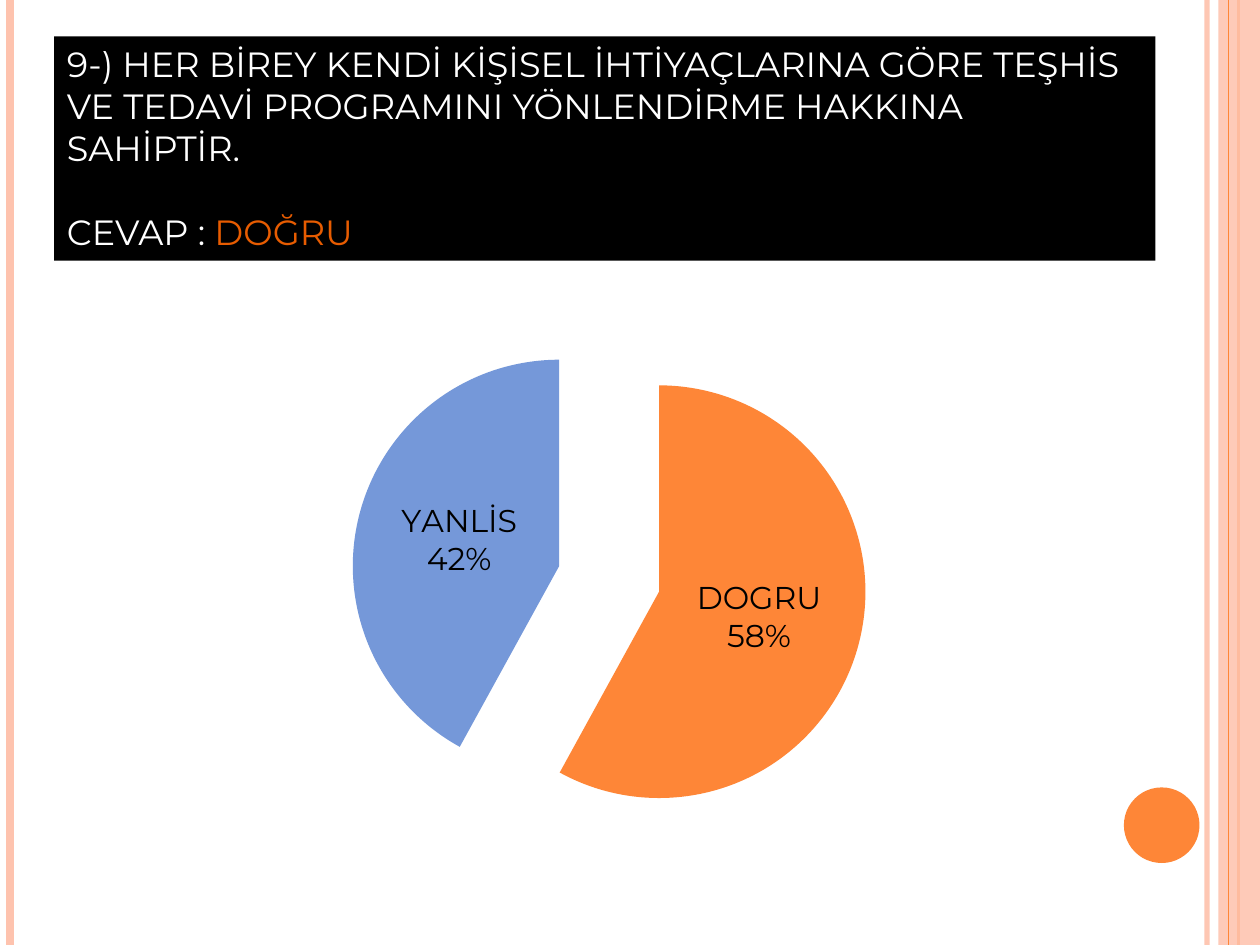
from dataclasses import dataclass

from lxml.etree import SubElement
from pptx import Presentation
from pptx.chart.data import CategoryChartData
from pptx.dml.color import RGBColor
from pptx.enum.chart import XL_CHART_TYPE as ChartType, XL_LABEL_POSITION as LabelPosition
from pptx.enum.shapes import MSO_CONNECTOR as Connector, MSO_SHAPE as Preset
from pptx.enum.text import MSO_ANCHOR as Anchor, PP_ALIGN as Align
from pptx.oxml import parse_xml
from pptx.oxml.ns import nsdecls, qn
from pptx.util import Inches, Pt

WIDTH, HEIGHT = Inches(10), Inches(7.5)
FONT = "Montserrat"
COLORS = {
    "peach": "FEC3AE",
    "orange": "FE8637",
    "blue": "7598D9",
    "answer": "E75C01",
    "black": "000000",
    "white": "FFFFFF",
}


@dataclass
class Stripe:
    x: float  # share of the slide width
    color: str
    weight: float
    opacity: int = 100


@dataclass
class Box:
    """Position and size as shares of the slide."""
    left: float
    top: float
    width: float
    height: float

    def emu(self) -> tuple:
        return (int(self.left * WIDTH), int(self.top * HEIGHT),
                int(self.width * WIDTH), int(self.height * HEIGHT))


STRIPES_BEHIND = [
    Stripe(0.958, "peach", 3, 93),
    Stripe(0.008, "peach", 4.5),
    Stripe(0.983, "orange", 1.5),
]
STRIPE_FRONT = Stripe(0.975, "orange", 0.75)
BAND = Box(0.967, 0, 0.033, 1)
DOT = Box(0.892, 0.8333, 0.06, 0.08)
QUESTION = Box(0.043, 0.0385, 0.874, 0.2375)
PIE = Box(0.146, 0.3213, 0.675, 0.5827)


def rgb(name: str) -> RGBColor:
    return RGBColor.from_string(COLORS[name])


def set_opacity(element, percent: int) -> None:
    color = next(element.iter(qn("a:srgbClr")))
    SubElement(color, qn("a:alpha")).set("val", str(percent * 1000))


def draw_stripe(slide, stripe: Stripe) -> None:
    x = int(stripe.x * WIDTH)
    line = slide.shapes.add_connector(Connector.STRAIGHT, x, 0, x, HEIGHT)
    line.line.color.rgb = rgb(stripe.color)
    line.line.width = Pt(stripe.weight)
    properties = line._element.spPr
    if stripe.opacity < 100:
        set_opacity(properties, stripe.opacity)
    SubElement(properties, qn("a:effectLst"))


def draw_shape(slide, preset: Preset, box: Box, color: str, opacity: int = 100) -> None:
    shape = slide.shapes.add_shape(preset, *box.emu())
    shape.shadow.inherit = False
    shape.fill.solid()
    shape.fill.fore_color.rgb = rgb(color)
    shape.line.fill.background()
    if opacity < 100:
        set_opacity(shape._element.spPr, opacity)


def write_question(slide) -> None:
    title = slide.shapes.title
    title.left, title.top, title.width, title.height = QUESTION.emu()
    title.fill.solid()
    title.fill.fore_color.rgb = rgb("black")
    frame = title.text_frame
    frame.word_wrap = True
    frame.vertical_anchor = Anchor.TOP
    frame.text = ("9-) HER BİREY KENDİ KİŞİSEL İHTİYAÇLARINA GÖRE TEŞHİS "
                  "VE TEDAVİ PROGRAMINI YÖNLENDİRME HAKKINA SAHİPTİR.\nCEVAP : ")
    answer = frame.paragraphs[1]
    answer.space_before = Pt(24)
    answer.add_run().text = "DOĞRU"
    for paragraph in frame.paragraphs:
        paragraph.alignment = Align.LEFT
        for run in paragraph.runs:
            run.font.name = FONT
            run.font.size = Pt(20)
            run.font.color.rgb = rgb("white")
    answer.runs[-1].font.color.rgb = rgb("answer")


def draw_pie(slide) -> None:
    data = CategoryChartData()
    data.categories = ["DOGRU", "YANLİS"]
    data.add_series("Series 1", [58, 42])
    chart = slide.shapes.add_chart(ChartType.PIE, *PIE.emu(), data).chart
    chart.has_legend = False
    chart.has_title = False
    chart.font.name = "TeX Gyre Schola"
    chart.font.size = Pt(18)
    chart.font.color.rgb = rgb("black")

    # Slices, pulled apart
    plot = chart.plots[0]
    plot.vary_by_categories = True
    series = plot.series[0]
    for index, color in enumerate(["orange", "blue"]):
        fill = series.points[index].format.fill
        fill.solid()
        fill.fore_color.rgb = rgb(color)
    explosion = parse_xml(f'<c:explosion {nsdecls("c")} val="25"/>')
    series._element.find(qn("c:dPt")).addprevious(explosion)

    # Labels: category over percentage
    labels = series.data_labels
    labels.show_category_name = True
    labels.show_percentage = True
    labels.show_value = False
    labels.position = LabelPosition.CENTER
    labels.font.name = FONT
    labels.font.size = Pt(18)
    labels.font.color.rgb = rgb("black")
    separator = parse_xml(f'<c:separator {nsdecls("c")}>\n</c:separator>')
    labels._element.find(qn("c:showBubbleSize")).addnext(separator)


def main() -> None:
    deck = Presentation()
    deck.slide_width, deck.slide_height = WIDTH, HEIGHT
    slide = deck.slides.add_slide(deck.slide_layouts[5])

    # Side decoration
    for stripe in STRIPES_BEHIND:
        draw_stripe(slide, stripe)
    draw_shape(slide, Preset.RECTANGLE, BAND, "peach", 87)
    draw_stripe(slide, STRIPE_FRONT)
    draw_shape(slide, Preset.OVAL, DOT, "orange")

    # Question and answers
    write_question(slide)
    draw_pie(slide)
    deck.save("out.pptx")


if __name__ == "__main__":
    main()
